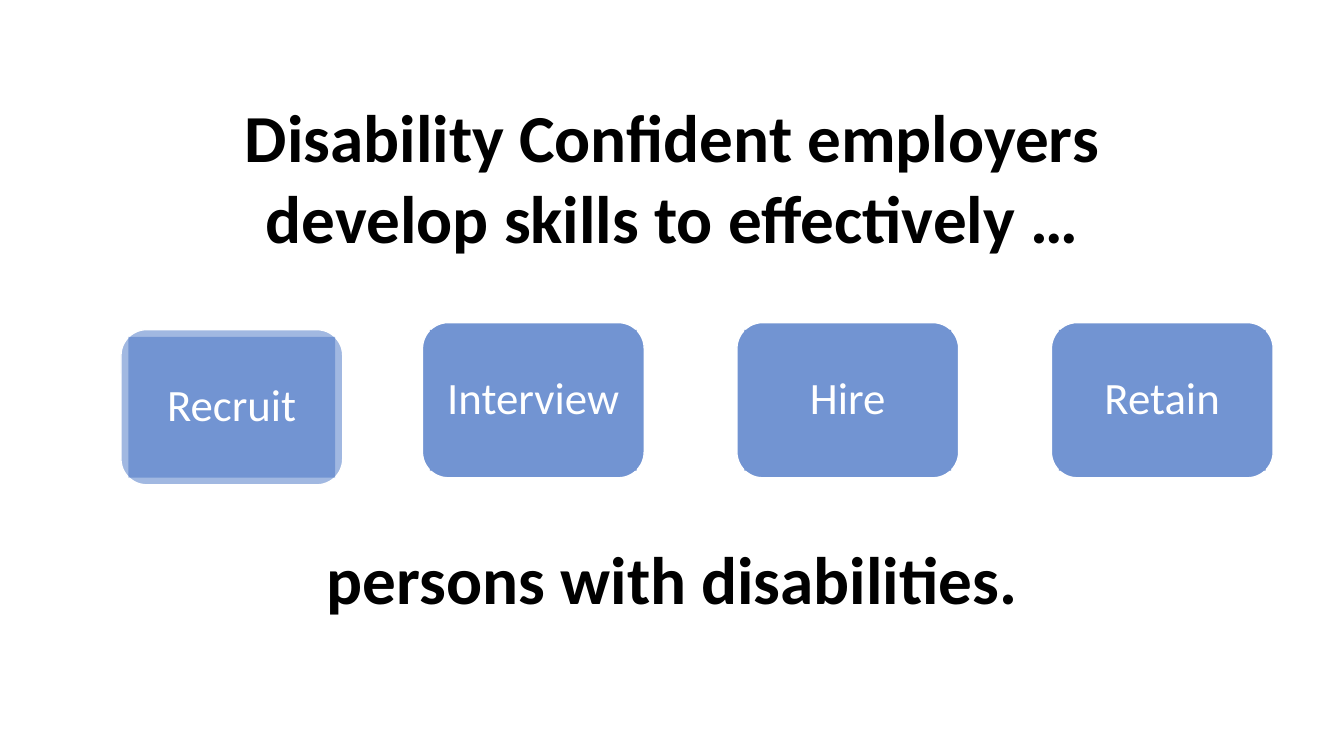
from dataclasses import dataclass

from lxml import etree
from pptx import Presentation
from pptx import util as u
from pptx.dml.color import RGBColor
from pptx.enum import shapes, text
from pptx.oxml.ns import qn


@dataclass(frozen=True)
class Theme:
    font: str = "Calibri"
    ink: str = "000000"
    white: str = "FFFFFF"
    soft_blue: str = "7294D2"
    blue: str = "4472C4"
    statement_size: int = 48
    card_size: int = 32


class SlideBuilder:
    """Draws styled elements placed by percentages of the slide's size."""

    def __init__(self, prs, theme):
        self.prs, self.theme = prs, theme
        self.s = prs.slides.add_slide(prs.slide_layouts[6])

    def box(self, left, top, width, height):
        w, h = self.prs.slide_width, self.prs.slide_height
        return [u.Emu(round(share * side / 100))
                for share, side in ((left, w), (top, h), (width, w), (height, h))]

    def add_words(self, p, words, size, color, bold=False):
        p.alignment = text.PP_ALIGN.CENTER
        r = p.add_run()
        r.text = words
        formats = {"name": self.theme.font, "size": u.Pt(size), "bold": bold}
        for name, value in formats.items():
            setattr(r.font, name, value)
        r.font.color.rgb = RGBColor.from_string(color)

    def panel(self, group, kind, box, fill, alpha):
        sp = group.shapes.add_shape(kind, *self.box(*box))
        sp.shadow.inherit = False
        sp.fill.solid()
        sp.fill.fore_color.rgb = RGBColor.from_string(fill)
        if alpha < 100:
            color = sp._element.spPr.find(qn("a:solidFill"))[0]
            etree.SubElement(color, qn("a:alpha"), val=str(alpha * 1000))
        return sp

    def card(self, words, left, top, fill, alpha=100):
        width, height, inset_x, inset_y = 16.5, 20.53, 0.55, 0.95
        group = self.s.shapes.add_group_shape()
        plate = self.panel(group, shapes.MSO_SHAPE.ROUNDED_RECTANGLE,
                           (left, top, width, height), fill, alpha)
        plate.line.color.rgb = RGBColor.from_string(self.theme.white)
        plate.line.width = u.Pt(1)
        inner = (left + inset_x, top + inset_y,
                 width - 2 * inset_x, height - 2 * inset_y)
        label = self.panel(group, shapes.MSO_SHAPE.RECTANGLE, inner, fill, alpha)
        label.line.fill.background()
        tf = label.text_frame
        formats = {"word_wrap": True, "vertical_anchor": text.MSO_ANCHOR.MIDDLE}
        formats.update({f"margin_{side}": u.Inches(0.11)
                        for side in ("left", "top", "right", "bottom")})
        for name, value in formats.items():
            setattr(tf, name, value)
        p = tf.paragraphs[0]
        p.line_spacing = 0.9
        self.add_words(p, words, self.theme.card_size, self.theme.white)

    def statement(self, opening, closing, box, gap):
        tf = self.s.shapes.add_textbox(*self.box(*box)).text_frame
        tf.word_wrap = True
        tf.auto_size = text.MSO_AUTO_SIZE.SHAPE_TO_FIT_TEXT
        first, last = tf.paragraphs[0], tf.add_paragraph()
        last.space_before = u.Pt(gap)
        for p, words in ((first, opening), (last, closing)):
            self.add_words(p, words, self.theme.statement_size, self.theme.ink, bold=True)


def main():
    prs = Presentation()
    prs.slide_width, prs.slide_height = u.Inches(13.33), u.Inches(7.5)
    theme = Theme()
    slide = SlideBuilder(prs, theme)
    slide.card("Recruit", 9, 43.6, theme.blue, alpha=50)
    for column, skill in enumerate(("Interview", "Hire", "Retain")):
        slide.card(skill, 31.43 + 23.4 * column, 42.67, theme.soft_blue)
    slide.statement("Disability Confident employers develop skills to effectively …",
                    "persons with disabilities.", (12.6, 12, 74.87, 70.4), gap=200)
    prs.save("out.pptx")


if __name__ == "__main__":
    main()
